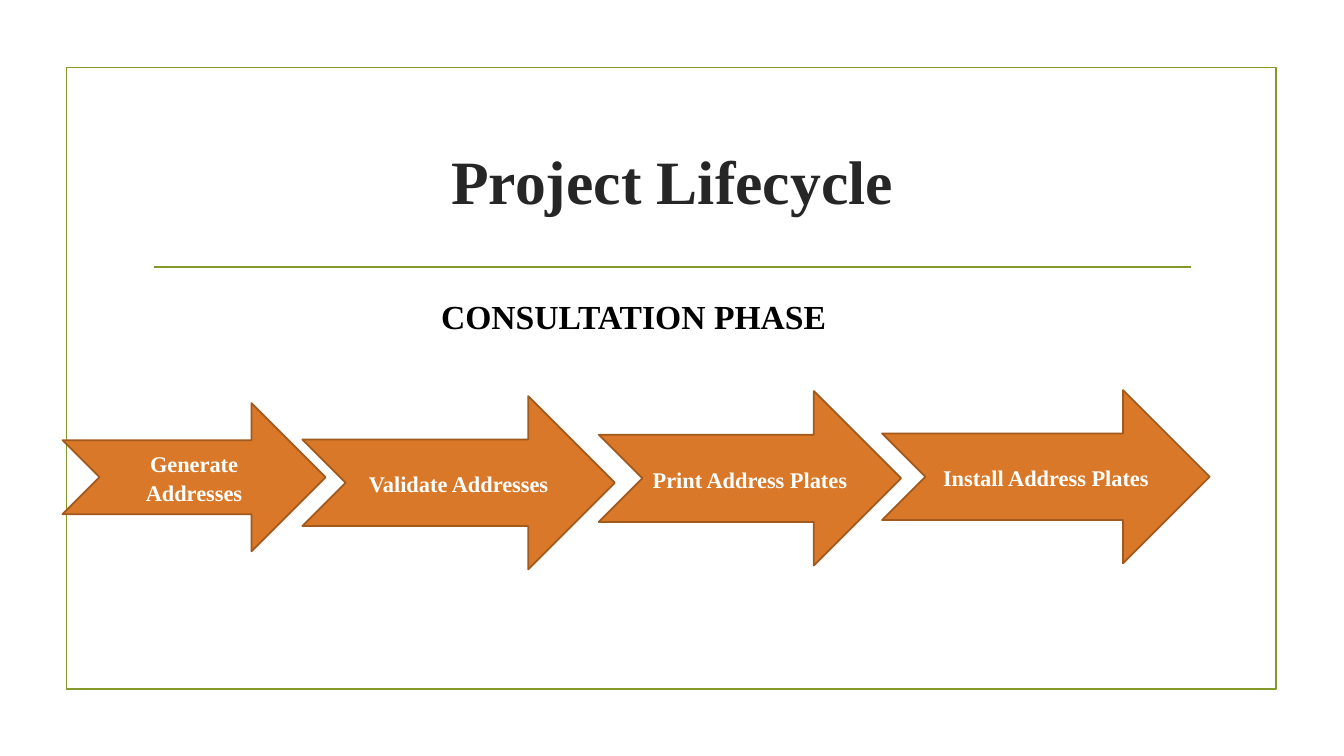
from lxml import etree
from pptx import Presentation
from pptx.dml.color import RGBColor
from pptx.enum.shapes import MSO_CONNECTOR, MSO_SHAPE
from pptx.enum.text import MSO_ANCHOR, MSO_AUTO_SIZE, PP_ALIGN
from pptx.oxml.ns import qn
from pptx.util import Inches, Pt

RECTANGLE = MSO_SHAPE.RECTANGLE
NOTCHED_ARROW = MSO_SHAPE.NOTCHED_RIGHT_ARROW
STRAIGHT = MSO_CONNECTOR.STRAIGHT
MIDDLE, TOP = MSO_ANCHOR.MIDDLE, MSO_ANCHOR.TOP
CENTER = PP_ALIGN.CENTER
GROW = MSO_AUTO_SIZE.SHAPE_TO_FIT_TEXT

# Label, then left, top, width and height in percent of the slide
PHASES = [
    ("Generate Addresses", (4.65, 53.33, 19.58, 19.6)),
    ("Validate Addresses", (22.5, 52.4, 23.25, 22.93)),
    ("Print Address Plates", (44.55, 51.73, 22.5, 23.07)),
    ("Install Address Plates", (65.63, 51.6, 24.38, 22.93)),
]


def rgb(hex_colour):
    return RGBColor.from_string(hex_colour)


class LifecycleSlide:
    """Draws on one slide; all places are percentages of its size."""

    FONT = "Times New Roman"
    OLIVE, ORANGE, BROWN = "83992A", "D97828", "A1591E"
    CHARCOAL, BLACK, WHITE = "262626", "000000", "FFFFFF"
    LINE_WIDTH = Pt(1.25)

    def __init__(self, presentation):
        self.width = presentation.slide_width
        self.height = presentation.slide_height
        self.slide = presentation.slides.add_slide(presentation.slide_layouts[6])
        self.slide.background.fill.solid()
        self.slide.background.fill.fore_color.rgb = rgb(self.WHITE)

    def place(self, x, y):
        return round(self.width * x / 100), round(self.height * y / 100)

    def box(self, area):
        return *self.place(*area[:2]), *self.place(*area[2:])

    def stroke(self, line, colour):
        line.color.rgb = rgb(colour)
        line.width = self.LINE_WIDTH

    def set_text(self, frame, text, size, colour, anchor):
        frame.word_wrap = True
        frame.vertical_anchor = anchor
        frame.text = text
        paragraph = frame.paragraphs[0]
        paragraph.alignment = CENTER
        font = paragraph.runs[0].font
        font.name, font.size, font.bold = self.FONT, Pt(size), True
        font.color.rgb = rgb(colour)
        return paragraph

    def frame(self, area):
        border = self.slide.shapes.add_shape(RECTANGLE, *self.box(area))
        border.shadow.inherit = False
        border.fill.background()
        self.stroke(border.line, self.OLIVE)

    def rule(self, left, right, y):
        divider = self.slide.shapes.add_connector(
            STRAIGHT, *self.place(left, y), *self.place(right, y))
        self.stroke(divider.line, self.OLIVE)
        etree.SubElement(divider._element.spPr, qn("a:effectLst"))

    def heading(self, text, area, size, colour, anchor=TOP):
        heading = self.slide.shapes.add_textbox(*self.box(area))
        self.set_text(heading.text_frame, text, size, colour, anchor)
        return heading

    def phase(self, label, area):
        arrow = self.slide.shapes.add_shape(NOTCHED_ARROW, *self.box(area))
        arrow.shadow.inherit = False
        arrow.fill.solid()
        arrow.fill.fore_color.rgb = rgb(self.ORANGE)
        self.stroke(arrow.line, self.BROWN)
        paragraph = self.set_text(arrow.text_frame, label, 16, self.WHITE, MIDDLE)
        paragraph.line_spacing = 1.07
        paragraph.space_after = Pt(8)


def main():
    presentation = Presentation()
    presentation.slide_width = Inches(13.33)
    presentation.slide_height = Inches(7.5)

    lifecycle = LifecycleSlide(presentation)
    lifecycle.frame((4.95, 8.93, 90, 82.27))
    lifecycle.rule(11.48, 88.6, 35.33)
    lifecycle.heading("Project Lifecycle", (10.65, 14.27, 78.75, 19.07),
                      44, lifecycle.CHARCOAL, MIDDLE)
    for label, area in PHASES:
        lifecycle.phase(label, area)
    subtitle = lifecycle.heading("CONSULTATION PHASE", (25.05, 38.53, 44.18, 6.67),
                                 24, lifecycle.BLACK)
    subtitle.text_frame.auto_size = GROW

    presentation.save("out.pptx")


if __name__ == "__main__":
    main()
